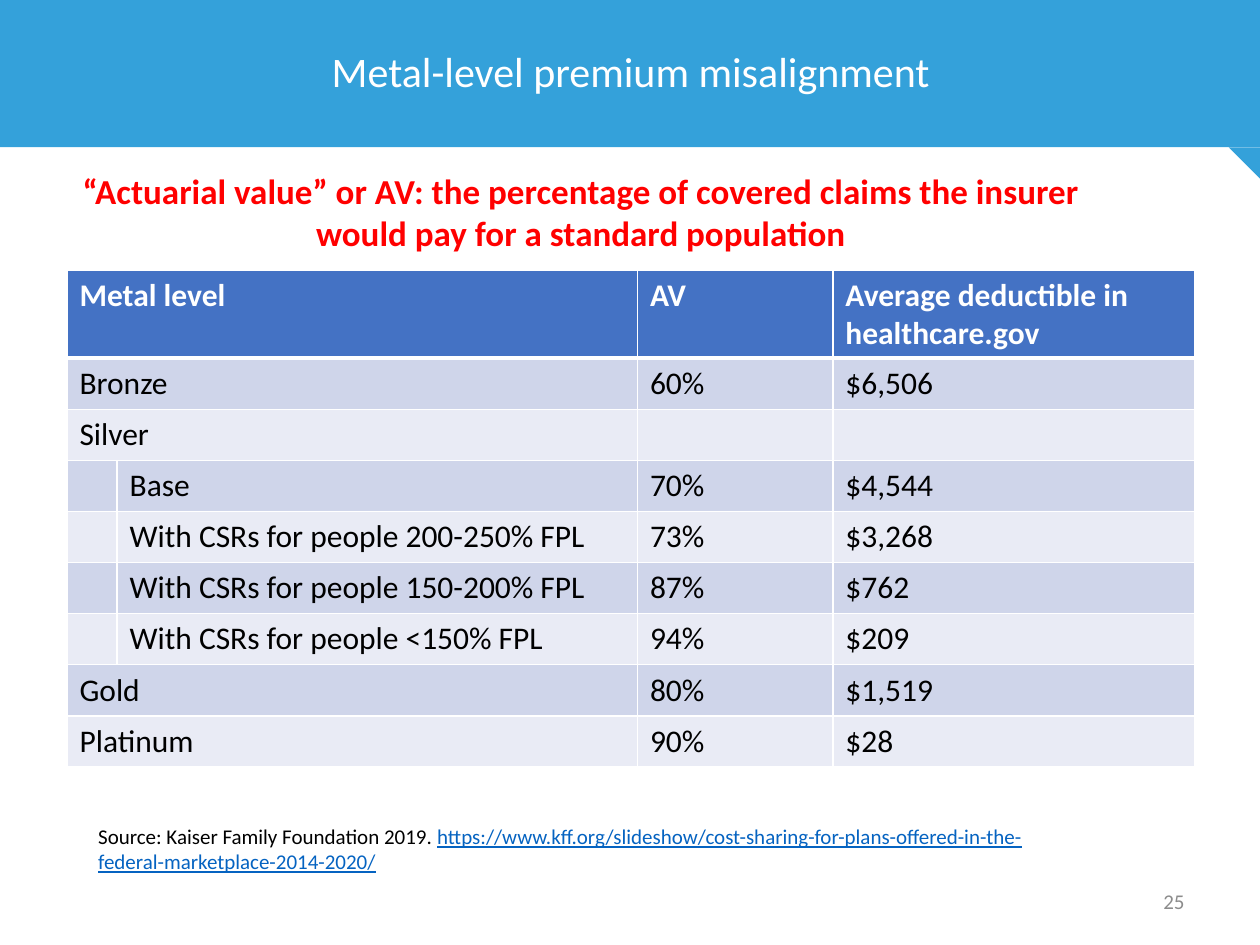
from dataclasses import dataclass

from lxml import etree
from pptx import Presentation
from pptx.dml.color import RGBColor
from pptx.enum.shapes import MSO_SHAPE
from pptx.enum.text import MSO_ANCHOR, PP_ALIGN
from pptx.oxml.ns import qn
from pptx.util import Cm, Pt

RECTANGLE = MSO_SHAPE.RECTANGLE
RIGHT_TRIANGLE = MSO_SHAPE.RIGHT_TRIANGLE
TOP, MIDDLE = MSO_ANCHOR.TOP, MSO_ANCHOR.MIDDLE
LEFT, CENTER = PP_ALIGN.LEFT, PP_ALIGN.CENTER


@dataclass(frozen=True)
class Theme:
    font: str = "Calibri"
    banner: str = "34A1DA"
    header: str = "4472C4"
    bands: tuple = ("CFD5EA", "E9EBF5")
    white: str = "FFFFFF"
    black: str = "000000"
    emphasis: str = "FF0000"
    link: str = "0563C1"
    muted: str = "8C8C8C"
    title_size: int = 24
    definition_size: int = 20
    table_size: int = 18
    small_size: int = 12
    rule: int = 1
    header_rule: int = 3


THEME = Theme()

HEADINGS = ("Metal level", "AV", "Average deductible in healthcare.gov")
SILVER_VARIANTS = (
    ("Base", "70%", "$4,544"),
    ("With CSRs for people 200-250% FPL", "73%", "$3,268"),
    ("With CSRs for people 150-200% FPL", "87%", "$762"),
    ("With CSRs for people <150% FPL", "94%", "$209"),
)
LEVELS = (
    ("Bronze", "60%", "$6,506"),
    ("Silver", "", ""),
    *SILVER_VARIANTS,
    ("Gold", "80%", "$1,519"),
    ("Platinum", "90%", "$28"),
)
COLUMN_WIDTHS = (1.01, 10.49, 3.94, 7.29)
HEADER_HEIGHT, LEVEL_HEIGHT = 1.78, 1.03


def add_run(paragraph, text, size, color, **formats):
    run = paragraph.add_run()
    run.text = text
    values = {"name": THEME.font, "size": Pt(size), **formats}
    for attribute, value in values.items():
        setattr(run.font, attribute, value)
    run.font.color.rgb = RGBColor.from_string(color)


def add_text(slide, bounds, runs, align=LEFT, anchor=TOP, line_spacing=None):
    frame = slide.shapes.add_textbox(*map(Cm, bounds)).text_frame
    frame.word_wrap = True
    frame.vertical_anchor = anchor
    paragraph = frame.paragraphs[0]
    paragraph.alignment = align
    paragraph.line_spacing = line_spacing
    for text, size, color, formats in runs:
        add_run(paragraph, text, size, color, **formats)


def add_block(slide, kind, bounds, rotation=0):
    block = slide.shapes.add_shape(kind, *map(Cm, bounds))
    block.rotation = rotation
    block.shadow.inherit = False
    block.fill.solid()
    block.fill.fore_color.rgb = RGBColor.from_string(THEME.banner)
    block.line.fill.background()


def set_borders(cell, top, bottom):
    properties = cell._tc.get_or_add_tcPr()
    widths = {"lnL": THEME.rule, "lnR": THEME.rule, "lnT": top, "lnB": bottom}
    for position, (side, width) in enumerate(widths.items()):
        border = etree.Element(qn(f"a:{side}"), w=str(Pt(width)))
        fill = etree.SubElement(border, qn("a:solidFill"))
        etree.SubElement(fill, qn("a:srgbClr"), val=THEME.white)
        properties.insert(position, border)


def fill_row(table, index, entries):
    is_header = index == 0
    band = THEME.header if is_header else THEME.bands[(index - 1) % 2]
    color = THEME.white if is_header else THEME.black
    top = THEME.header_rule if index == 1 else THEME.rule
    bottom = THEME.header_rule if is_header else THEME.rule
    for cell in table.rows[index].cells:
        cell.fill.solid()
        cell.fill.fore_color.rgb = RGBColor.from_string(band)
        set_borders(cell, top, bottom)
    is_variant = entries in SILVER_VARIANTS
    if not is_variant:
        table.cell(index, 0).merge(table.cell(index, 1))
    for column, text in zip((int(is_variant), 2, 3), entries):
        if text:
            paragraph = table.cell(index, column).text_frame.paragraphs[0]
            add_run(paragraph, text, THEME.table_size, color, bold=is_header)


def add_levels_table(slide, left, top):
    rows = (HEADINGS, *LEVELS)
    heights = (HEADER_HEIGHT, *[LEVEL_HEIGHT] * len(LEVELS))
    bounds = (left, top, sum(COLUMN_WIDTHS), sum(heights))
    table = slide.shapes.add_table(
        len(rows), len(COLUMN_WIDTHS), *map(Cm, bounds)
    ).table
    for column, width in zip(table.columns, COLUMN_WIDTHS):
        column.width = Cm(width)
    for row, height in zip(table.rows, heights):
        row.height = Cm(height)
    for index, entries in enumerate(rows):
        fill_row(table, index, entries)


def main():
    deck = Presentation()
    deck.slide_width, deck.slide_height = Cm(25.4), Cm(19.05)
    slide = deck.slides.add_slide(deck.slide_layouts[6])

    add_block(slide, RECTANGLE, (0, 0, 25.4, 2.97))
    add_block(slide, RIGHT_TRIANGLE, (24.77, 2.97, 0.63, 0.63), rotation=180)
    add_text(slide, (22.94, 17.65, 1.45, 1.02),
             [("25", THEME.small_size, THEME.muted, {})], CENTER, MIDDLE)
    add_text(slide, (1.35, 0, 22.73, 2.97),
             [("Metal-level premium misalignment", THEME.title_size,
               THEME.white, {})], CENTER, MIDDLE, 0.9)
    add_levels_table(slide, 1.35, 5.44)
    add_text(slide, (0.94, 3.3, 21.54, 1.96),
             [("“Actuarial value” or AV: the percentage of covered claims "
               "the insurer would pay for a standard population",
               THEME.definition_size, THEME.emphasis, {"bold": True})], CENTER)
    add_text(slide, (1.73, 16.48, 20.35, 1.27), [
        ("Source: Kaiser Family Foundation 2019. ", THEME.small_size,
         THEME.black, {}),
        ("https://www.kff.org/slideshow/cost-sharing-for-plans-offered-in-the-"
         "federal-marketplace-2014-2020/", THEME.small_size, THEME.link,
         {"underline": True}),
    ])
    deck.save("out.pptx")


if __name__ == "__main__":
    main()
